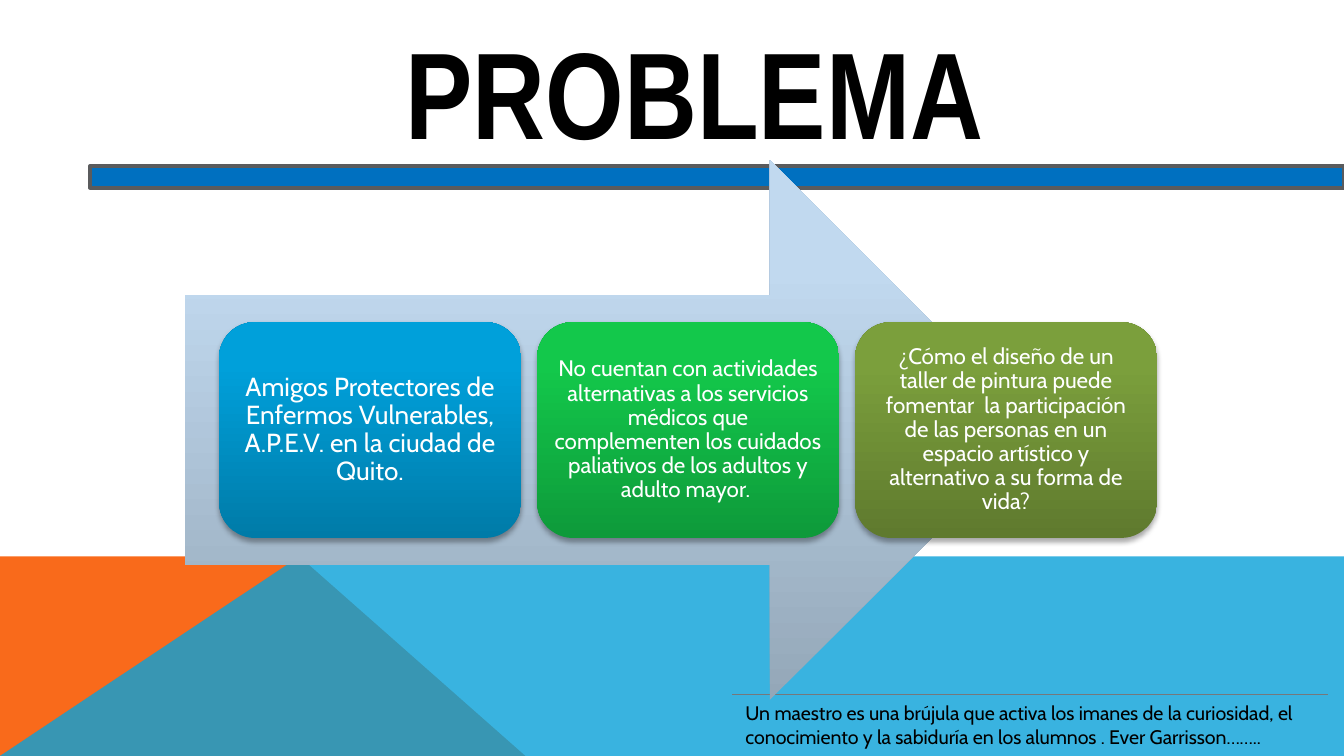
from dataclasses import dataclass

from lxml.etree import SubElement
from pptx import Presentation
from pptx.dml.color import RGBColor
from pptx.enum.shapes import MSO_CONNECTOR as Link, MSO_SHAPE as Preset
from pptx.enum.text import MSO_ANCHOR as Anchor, PP_ALIGN as Align
from pptx.oxml.ns import qn
from pptx.util import Cm, Pt


@dataclass(frozen=True)
class Theme:
    heading_font: str = "Arial Narrow"
    body_font: str = "Cabin"
    title_size: float = 66
    lead_size: float = 14
    card_size: float = 12
    quote_size: float = 10.5
    ink: str = "000000"
    light: str = "FFFFFF"
    orange: str = "F96A1B"
    sky: str = "08A1D9"
    bar: str = "0070C0"
    bar_edge: str = "5A5B5D"
    rule: str = "76787B"
    arrow: tuple = ("94A7B8", "C1D9EF")
    blue: tuple = ("007BA8", "00A0DA")
    green: tuple = ("0E9A3A", "13C84B")
    olive: tuple = ("5F7A2E", "7B9F3C")


@dataclass(frozen=True)
class Box:
    left: float
    top: float
    width: float
    height: float

    @property
    def right(self):
        return self.left + self.width

    @property
    def bottom(self):
        return self.top + self.height

    @property
    def lengths(self):
        return Cm(self.left), Cm(self.top), Cm(self.width), Cm(self.height)


THEME = Theme()
rgb = RGBColor.from_string


def write(holder, words, *, size, color, font=THEME.body_font, bold=False,
          align=Align.LEFT, anchor=Anchor.TOP, spacing=None, inset=None):
    frame = holder.text_frame
    frame.word_wrap = True
    frame.vertical_anchor = anchor
    if inset is not None:
        frame.margin_left = frame.margin_right = Cm(inset)
        frame.margin_top = frame.margin_bottom = Cm(inset)
    paragraph = frame.paragraphs[0]
    paragraph.alignment = align
    paragraph.line_spacing = spacing
    run = paragraph.add_run()
    run.text = words
    run.font.name = font
    run.font.size = Pt(size)
    run.font.bold = bold
    run.font.color.rgb = rgb(color)


def paint(shape, color):
    shape.shadow.inherit = False
    shape.line.fill.background()
    shape.fill.solid()
    shape.fill.fore_color.rgb = rgb(color)


def shade_upward(shape, colors):
    shape.shadow.inherit = False
    shape.line.fill.background()
    shape.fill.gradient()
    shape.fill.gradient_angle = 90
    for stop, color, position in zip(shape.fill.gradient_stops, colors, (0, 0.8)):
        stop.color.rgb = rgb(color)
        stop.position = position


def cast_shadow(shape):
    effects = shape._element.spPr.find(qn("a:effectLst"))
    shadow = SubElement(effects, qn("a:outerShdw"), blurRad=str(Pt(3.1)),
                        dist=str(Pt(1.8)), dir="5400000", rotWithShape="0")
    tint = SubElement(shadow, qn("a:srgbClr"), val="000000")
    SubElement(tint, qn("a:alpha"), val="35000")


def add_polygon(slide, points, color):
    start, *rest = [(Cm(x), Cm(y)) for x, y in points]
    builder = slide.shapes.build_freeform(*start)
    builder.add_line_segments(rest)
    polygon = builder.convert_to_shape()
    paint(polygon, color)
    return polygon


def add_backdrop(slide, box):
    peak = (box.left + 5.66, box.top)
    corner = (box.left, box.bottom)
    add_polygon(slide, [corner, (box.left, box.top), peak,
                        (box.left + 9.93, box.bottom)], THEME.orange)
    water = add_polygon(slide, [corner, peak, (box.right, box.top),
                                (box.right, box.bottom)], THEME.sky)
    tint = water._element.spPr.find(qn("a:solidFill"))[0]
    SubElement(tint, qn("a:alpha"), val="80000")


def add_title(slide, box):
    write(slide.shapes.add_textbox(*box.lengths), "PROBLEMA",
          size=THEME.title_size, color=THEME.ink, font=THEME.heading_font,
          bold=True, align=Align.CENTER, anchor=Anchor.MIDDLE)


def add_quote(slide, box):
    write(slide.shapes.add_textbox(*box.lengths),
          "Un maestro es una brújula que activa los imanes de la curiosidad, el "
          "conocimiento y la sabiduría en los alumnos . Ever Garrisson……..",
          size=THEME.quote_size, color=THEME.ink)
    rule = slide.shapes.add_connector(Link.STRAIGHT, Cm(box.left), Cm(box.top),
                                      Cm(box.right), Cm(box.top))
    rule.line.color.rgb = rgb(THEME.rule)
    rule.line.width = Pt(0.75)
    SubElement(rule._element.spPr, qn("a:effectLst"))


def add_bar(slide, box):
    bar = slide.shapes.add_shape(Preset.RECTANGLE, *box.lengths)
    paint(bar, THEME.bar)
    bar.line.color.rgb = rgb(THEME.bar_edge)
    bar.line.width = Pt(2)


def add_process(slide, box):
    arrow_box = Box(box.left, box.top, 16.15, box.height)
    arrow = slide.shapes.add_shape(Preset.RIGHT_ARROW, *arrow_box.lengths)
    shade_upward(arrow, THEME.arrow)

    steps = [
        ("Amigos Protectores de Enfermos Vulnerables, A.P.E.V. en la ciudad de "
         "Quito.", THEME.blue, THEME.lead_size, 0.15),
        ("No cuentan con actividades alternativas a los servicios médicos que "
         "complementen los cuidados paliativos de los adultos y adulto mayor. ",
         THEME.green, THEME.card_size, 0.13),
        ("¿Cómo el diseño de un taller de pintura puede fomentar  la "
         "participación de las personas en un espacio artístico y alternativo "
         "a su forma de vida?", THEME.olive, THEME.card_size, 0.13),
    ]
    width, gap, height = 5.71, 0.3, box.height * 0.4
    first = box.right - len(steps) * width - (len(steps) - 1) * gap
    top = box.top + (box.height - height) / 2
    for index, (words, colors, size, inset) in enumerate(steps):
        card_box = Box(first + index * (width + gap), top, width, height)
        card = slide.shapes.add_shape(Preset.ROUNDED_RECTANGLE, *card_box.lengths)
        shade_upward(card, colors)
        cast_shadow(card)
        write(card, words, size=size, color=THEME.light, align=Align.CENTER,
              anchor=Anchor.MIDDLE, spacing=0.9, inset=inset)


def main():
    deck = Presentation()
    deck.slide_width, deck.slide_height = Cm(25.4), Cm(14.29)
    slide = deck.slides.add_slide(deck.slide_layouts[6])
    add_backdrop(slide, Box(0, 10.52, 25.4, 3.77))
    add_title(slide, Box(2.69, 1.14, 20.88, 1.14))
    add_quote(slide, Box(13.84, 13.13, 11.25, 1.19))
    add_bar(slide, Box(1.7, 3.14, 23.7, 0.41))
    add_process(slide, Box(3.5, 3.03, 18.37, 10.2))
    deck.save("out.pptx")


if __name__ == "__main__":
    main()
